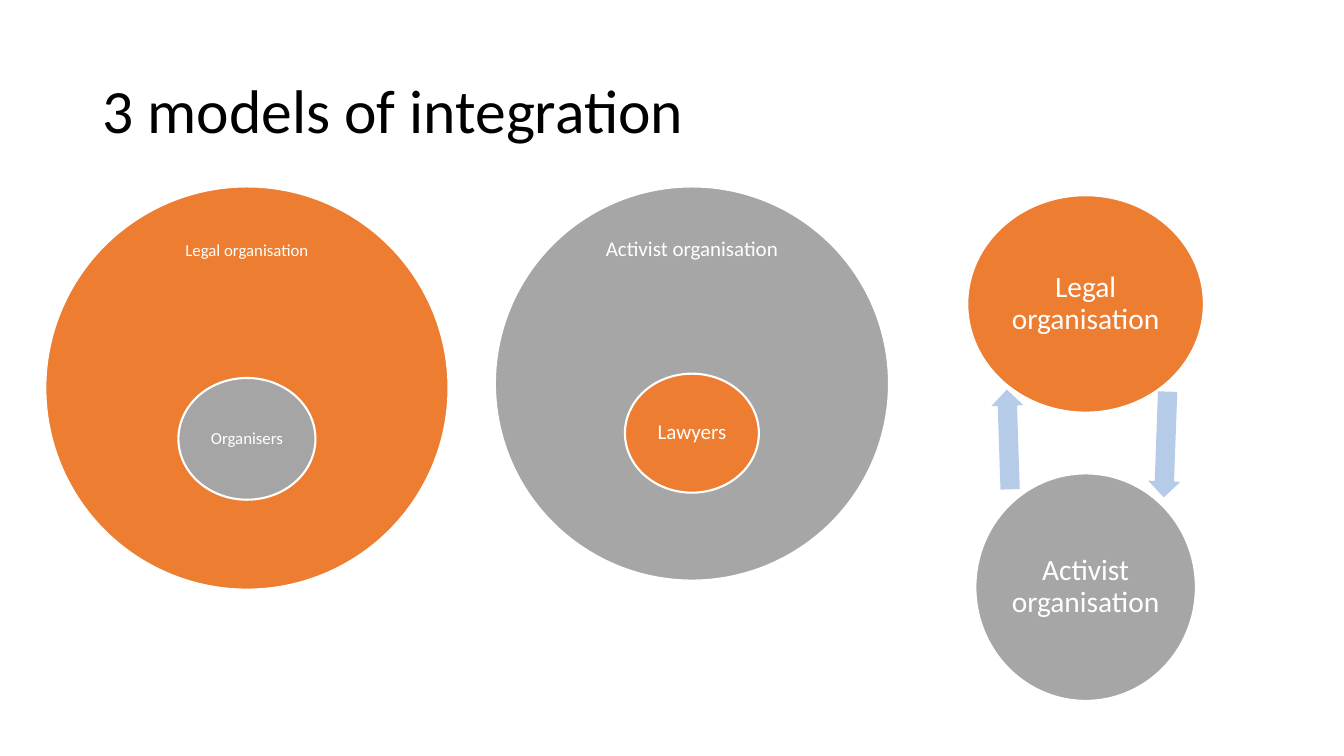
"""Build a slide that shows three models of integration."""
import pptx
import pptx.dml.color
import pptx.enum.shapes
import pptx.enum.text
import pptx.util

Pt = pptx.util.Pt
RGB = pptx.dml.color.RGBColor
SHAPE = pptx.enum.shapes.MSO_SHAPE
ALIGN = pptx.enum.text.PP_ALIGN
MIDDLE = pptx.enum.text.MSO_ANCHOR.MIDDLE

ORANGE = RGB(0xED, 0x7D, 0x31)
GREY = RGB(0xA5, 0xA5, 0xA5)
SILVER = RGB(0xA6, 0xA6, 0xA6)
BLUE = RGB(0xB5, 0xCB, 0xE7)
WHITE = RGB(0xFF, 0xFF, 0xFF)
BLACK = RGB(0, 0, 0)


def style(item, values):
    """Set each named value on the item."""
    for name, value in values.items():
        setattr(item, name, value)


def write(shapes, box, text, size, color=WHITE, align=ALIGN.CENTER, inset=2.5):
    """Place one line or more of text, centred in height, in the box."""
    frame = shapes.add_textbox(*map(Pt, box)).text_frame
    sides = ("left", "top", "right", "bottom")
    style(frame, {f"margin_{side}": Pt(inset) for side in sides})
    style(frame, {"word_wrap": True, "vertical_anchor": MIDDLE})
    para = frame.paragraphs[0]
    style(para, {"text": text, "alignment": align, "line_spacing": 0.9})
    font = para.runs[0].font
    style(font, {"name": "Calibri", "size": Pt(size)})
    font.color.rgb = color


def draw(shapes, kind, box, color):
    """Add a flat shape of one colour in the box."""
    shape = shapes.add_shape(kind, *map(Pt, box))
    shape.shadow.inherit = False
    shape.fill.solid()
    shape.fill.fore_color.rgb = color
    shape.line.fill.background()
    return shape


def disc(shapes, box, color, rim):
    """Add an ellipse with a white rim."""
    line = draw(shapes, SHAPE.OVAL, box, color).line
    line.color.rgb = WHITE
    line.width = Pt(rim)


def within(box, wide, high):
    """Return a box of the given shares, centred in the box."""
    left, top, width, height = box
    return (left + width * (1 - wide) / 2, top + height * (1 - high) / 2,
            width * wide, height * high)


def nest(slide, left, top, side, outer, inner, size):
    """Draw a large circle that holds a smaller one."""
    shapes = slide.shapes.add_group_shape().shapes
    name, color = outer
    disc(shapes, (left, top, side, side), color, 1.5)
    label = (left + 0.24 * side, top + 0.075 * side, 0.52 * side, 0.17 * side)
    write(shapes, label, name, size)
    name, color = inner
    core = (left + 0.33 * side, top + 0.475 * side, 0.34 * side, 0.302 * side)
    disc(shapes, core, color, 1.5)
    write(shapes, within(core, 0.71, 0.5), name, size)


def pair(slide, left, top, width, height):
    """Draw two circles, one above the other, joined by two arrows."""
    shapes = slide.shapes.add_group_shape().shapes
    mid = left + width / 2
    parts = (
        ("Legal organisation", ORANGE, top, width, 154.8),
        ("Activist organisation", SILVER, top + height - 162, 157, 162),
    )
    for name, color, upper, wide, high in parts:
        box = (mid - wide / 2, upper, wide, high)
        disc(shapes, box, color, 1)
        write(shapes, within(box, 0.71, 0.71), name, 21)
    thick = 23
    for shift, drop, long, turn in ((57.2, 177.8, 75.6, 92.1),
                                    (-55.1, 174.2, 71.3, 268.1)):
        box = (mid + shift - long / 2, top + drop - thick / 2, long, thick)
        arrow = draw(shapes, SHAPE.RIGHT_ARROW, box, BLUE)
        arrow.rotation = turn
        arrow.adjustments[0] = 0.6
        arrow.adjustments[1] = 0.5


def main():
    """Build and save the slide."""
    deck = pptx.Presentation()
    style(deck, {"slide_width": Pt(960), "slide_height": Pt(540)})
    slide = deck.slides.add_slide(deck.slide_layouts[6])
    write(slide.shapes, (66.2, 28.8, 828, 104.4), "3 models of integration",
          44, BLACK, ALIGN.LEFT, 7.2)
    nest(slide, 32.4, 133.2, 288, ("Legal organisation", ORANGE),
         ("Organisers", GREY), 12)
    nest(slide, 353.5, 133.2, 281.5, ("Activist organisation", SILVER),
         ("Lawyers", ORANGE), 15)
    pair(slide, 691.2, 139.7, 168.5, 360.7)
    deck.save("out.pptx")


if __name__ == "__main__":
    main()
